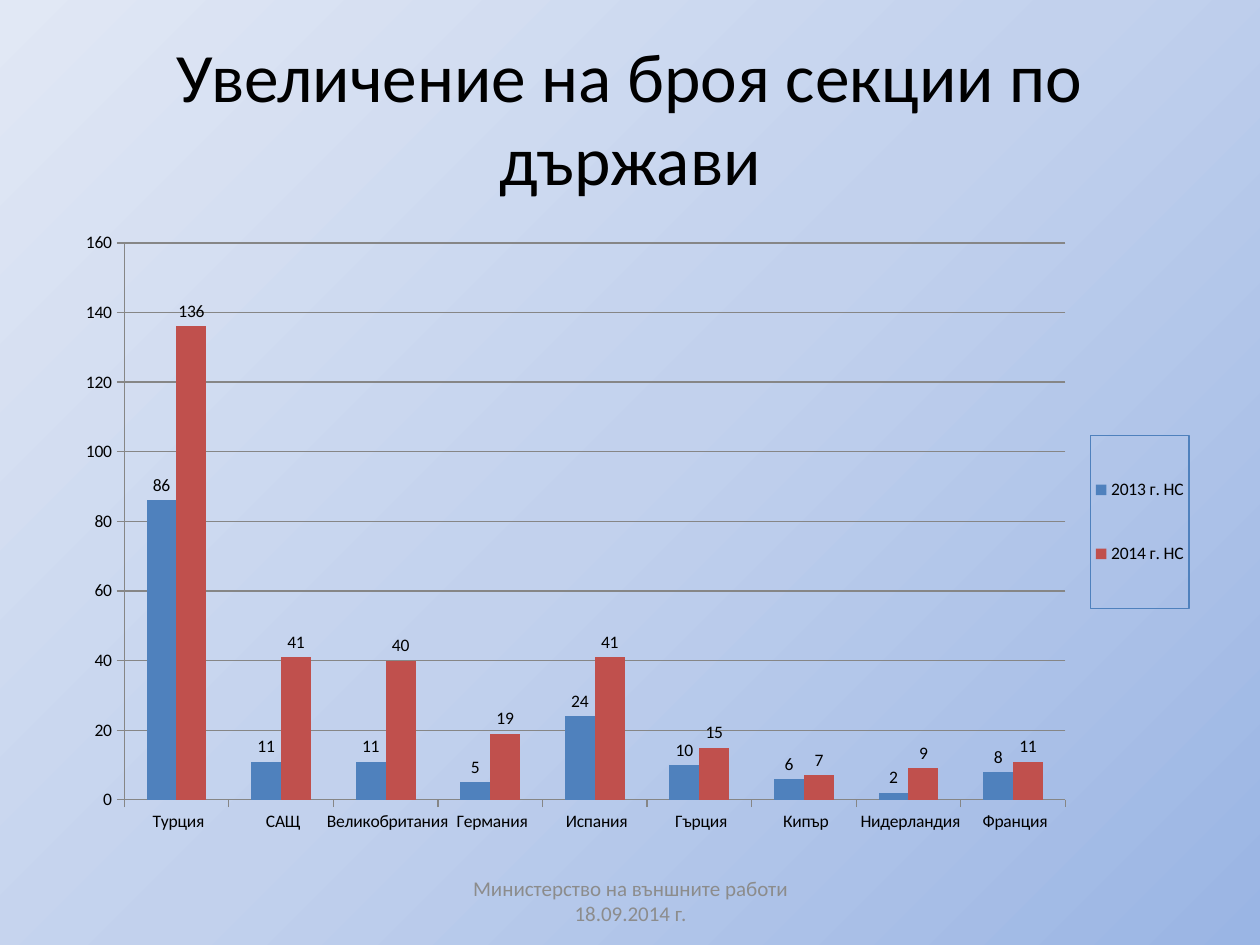
from dataclasses import dataclass

from pptx import Presentation
from pptx.chart.chart import Chart
from pptx.chart.data import CategoryChartData
from pptx.dml.color import RGBColor
from pptx.enum.chart import XL_CHART_TYPE, XL_LABEL_POSITION, XL_LEGEND_POSITION, XL_TICK_MARK
from pptx.enum.text import MSO_ANCHOR, PP_ALIGN
from pptx.oxml import parse_xml
from pptx.oxml.ns import nsdecls
from pptx.util import Inches, Pt

COLUMNS = XL_CHART_TYPE.COLUMN_CLUSTERED
ABOVE = XL_LABEL_POSITION.OUTSIDE_END
RIGHT = XL_LEGEND_POSITION.RIGHT
OUTSIDE = XL_TICK_MARK.OUTSIDE
MIDDLE = MSO_ANCHOR.MIDDLE
CENTER = PP_ALIGN.CENTER

FONT = "Calibri"
WIDTH, HEIGHT = Inches(10), Inches(7.5)
COLORS = {
    "text": "000000", "footer": "8C8C8C", "grid": "868686",
    "blue": "4F81BD", "red": "C0504D",
    "light": "E1E8F5", "middle": "C2D1ED", "dark": "9AB5E4",
}


@dataclass(frozen=True)
class Area:
    """A rectangle in shares of its container."""
    left: float
    top: float
    width: float
    height: float

    def on_slide(self) -> tuple[int, int, int, int]:
        """Return the rectangle in slide units."""
        return (round(self.left * WIDTH), round(self.top * HEIGHT),
                round(self.width * WIDTH), round(self.height * HEIGHT))


@dataclass(frozen=True)
class Election:
    """The section counts of one election."""
    name: str
    sections: tuple[int, ...]
    color: str


TITLE_AREA = Area(0.05, 0.04, 0.9, 1.25 / 7.5)
CHART_AREA = Area(0.05, 1.75 / 7.5, 0.9, 0.66)
FOOTER_AREA = Area(0.342, 6.95 / 7.5, 0.317, 0.4 / 7.5)
PLOT_AREA = Area(0.054, 0.036, 0.83, 0.893)
LEGEND_AREA = Area(0.906, 0.345, 0.087, 0.277)

COUNTRIES = (" Турция", " САЩ", " Великобритания", " Германия", " Испания",
             " Гърция", " Кипър", " Нидерландия", " Франция")
ELECTIONS = (
    Election("2013 г. НС", (86, 11, 11, 5, 24, 10, 6, 2, 8), "blue"),
    Election("2014 г. НС", (136, 41, 40, 19, 41, 15, 7, 9, 11), "red"),
)


def rgb(name: str) -> RGBColor:
    """Look up a named colour."""
    return RGBColor.from_string(COLORS[name])


def paint_background(slide) -> None:
    """Fill the slide with a diagonal gradient."""
    stops = "".join(
        f'<a:gs pos="{position * 1000}"><a:srgbClr val="{COLORS[name]}"/></a:gs>'
        for position, name in ((0, "light"), (50, "middle"), (100, "dark")))
    slide.element.cSld.insert(0, parse_xml(
        f'<p:bg {nsdecls("p", "a")}><p:bgPr><a:gradFill rotWithShape="1">'
        f'<a:gsLst>{stops}</a:gsLst><a:lin ang="2700000" scaled="0"/>'
        '</a:gradFill><a:effectLst/></p:bgPr></p:bg>'))


def write(shape, text: str, size: float, color: str) -> None:
    """Put centred text into a shape."""
    frame = shape.text_frame
    frame.text = text
    frame.word_wrap = True
    frame.vertical_anchor = MIDDLE
    paragraph = frame.paragraphs[0]
    paragraph.alignment = CENTER
    font = paragraph.runs[0].font
    font.name, font.size, font.color.rgb = FONT, Pt(size), rgb(color)


def layout_xml(area: Area, target: str = ""):
    """Build a manual chart layout."""
    inner = f'<c:layoutTarget val="{target}"/>' if target else ""
    return parse_xml(
        f'<c:layout {nsdecls("c")}><c:manualLayout>{inner}'
        '<c:xMode val="edge"/><c:yMode val="edge"/>'
        f'<c:x val="{area.left}"/><c:y val="{area.top}"/>'
        f'<c:w val="{area.width}"/><c:h val="{area.height}"/>'
        '</c:manualLayout></c:layout>')


def place_chart_parts(chart: Chart) -> None:
    """Fix the plot and legend positions and outline the legend."""
    plot_area = chart.element.chart.plotArea
    for layout in plot_area.xpath("c:layout"):
        plot_area.remove(layout)
    plot_area.insert(0, layout_xml(PLOT_AREA, "inner"))

    legend = chart.element.xpath("c:chart/c:legend")[0]
    for layout in legend.xpath("c:layout"):
        legend.remove(layout)
    position = legend.xpath("c:legendPos")[0]
    position.addnext(layout_xml(LEGEND_AREA))
    legend.xpath("c:overlay")[0].addnext(parse_xml(
        f'<c:spPr {nsdecls("c", "a")}><a:noFill/><a:ln w="9525"><a:solidFill>'
        f'<a:srgbClr val="{COLORS["blue"]}"/></a:solidFill></a:ln></c:spPr>'))


def add_section_chart(slide) -> None:
    """Draw the sections per country for both elections."""
    data = CategoryChartData()
    data.categories = COUNTRIES
    for election in ELECTIONS:
        data.add_series(election.name, election.sections)
    chart = slide.shapes.add_chart(COLUMNS, *CHART_AREA.on_slide(), data).chart
    chart.has_title = False
    chart.font.name, chart.font.size = FONT, Pt(10)
    chart.font.color.rgb = rgb("text")
    chart.has_legend = True
    chart.legend.position = RIGHT
    chart.legend.include_in_layout = False

    counts = chart.value_axis
    counts.minimum_scale, counts.maximum_scale, counts.major_unit = 0, 160, 20
    counts.has_major_gridlines = True
    for axis in (chart.category_axis, counts):
        axis.major_tick_mark = OUTSIDE
    for line in (chart.category_axis.format.line, counts.format.line,
                 counts.major_gridlines.format.line):
        line.color.rgb, line.width = rgb("grid"), Pt(0.75)

    plot = chart.plots[0]
    plot.gap_width, plot.overlap, plot.vary_by_categories = 150, 0, False
    for series, election in zip(plot.series, ELECTIONS):
        series.format.fill.solid()
        series.format.fill.fore_color.rgb = rgb(election.color)
        labels = series.data_labels
        labels.show_value, labels.position = True, ABOVE
    place_chart_parts(chart)


def main() -> None:
    """Build and save the slide."""
    deck = Presentation()
    deck.slide_width, deck.slide_height = WIDTH, HEIGHT
    slide = deck.slides.add_slide(deck.slide_layouts[5])
    paint_background(slide)

    title = slide.shapes.title
    title.left, title.top, title.width, title.height = TITLE_AREA.on_slide()
    write(title, "Увеличение на броя секции по държави", 39.6, "text")
    add_section_chart(slide)
    footer = slide.shapes.add_textbox(*FOOTER_AREA.on_slide())
    write(footer, "Министерство на външните работи 18.09.2014 г.", 12, "footer")
    deck.save("out.pptx")


if __name__ == "__main__":
    main()
